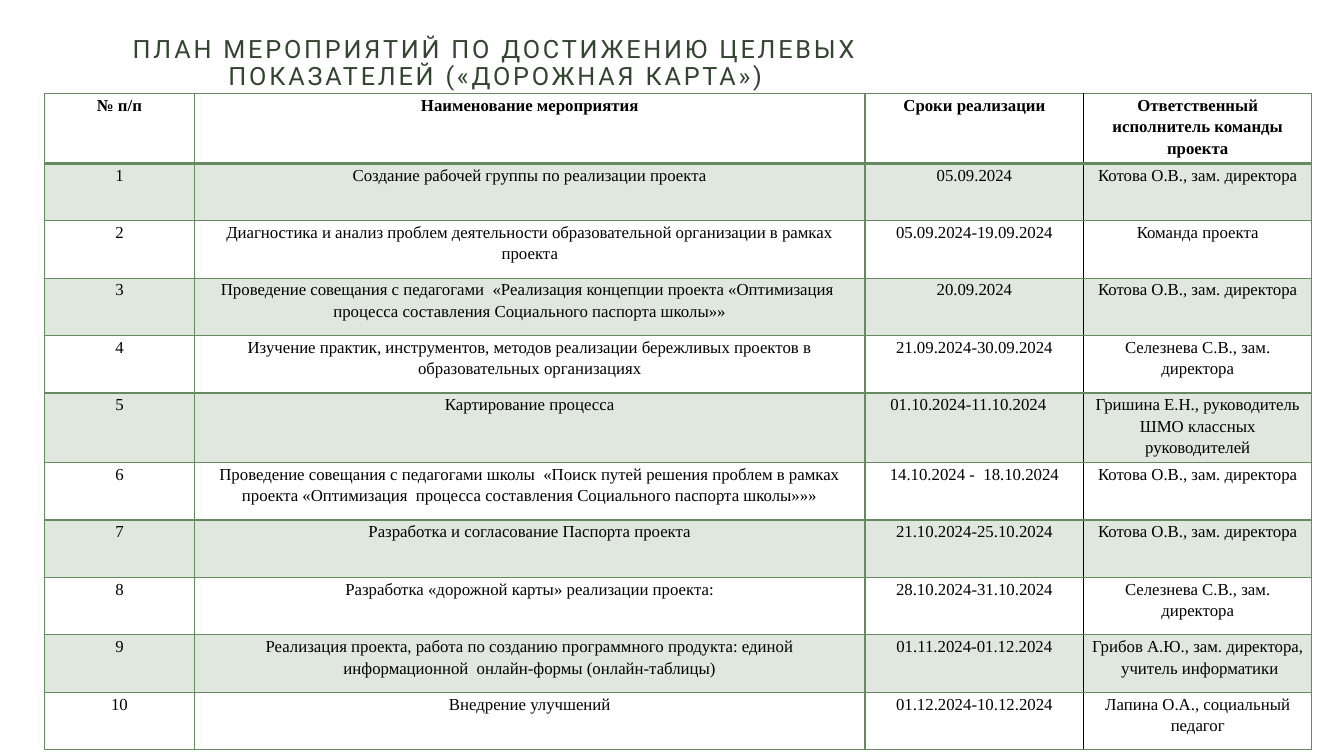
from lxml import etree
from pptx import Presentation
from pptx import util as u
from pptx.dml.color import RGBColor
from pptx.enum import text
from pptx.oxml import ns

GREEN = RGBColor(0x66, 0x8A, 0x60)
DARK_GREEN = RGBColor(0x33, 0x45, 0x30)
BLACK = RGBColor(0, 0, 0)

TITLE = "ПЛАН МЕРОПРИЯТИЙ ПО ДОСТИЖЕНИЮ ЦЕЛЕВЫХ ПОКАЗАТЕЛЕЙ («ДОРОЖНАЯ КАРТА»)"
HEADER = ("№ п/п", "Наименование мероприятия", "Сроки реализации",
          "Ответственный исполнитель команды проекта")
KOTOVA = "Котова О.В., зам. директора"
SELEZNEVA = "Селезнева С.В., зам. директора"
ACTIVITIES = [
    ("Создание рабочей группы по реализации проекта", "05.09.2024", KOTOVA),
    ("Диагностика и анализ проблем деятельности образовательной организации в рамках проекта",
     "05.09.2024-19.09.2024", "Команда проекта"),
    ("Проведение совещания с педагогами  «Реализация концепции проекта «Оптимизация  процесса "
     "составления Социального паспорта школы»»", "20.09.2024", KOTOVA),
    ("Изучение практик, инструментов, методов реализации бережливых проектов в "
     "образовательных организациях", "21.09.2024-30.09.2024", SELEZNEVA),
    ("Картирование процесса", "01.10.2024-11.10.2024",
     "Гришина Е.Н., руководитель ШМО классных руководителей"),
    ("Проведение совещания с педагогами школы  «Поиск путей решения проблем в рамках проекта "
     "«Оптимизация  процесса составления Социального паспорта школы»»»",
     "14.10.2024 -  18.10.2024", KOTOVA),
    ("Разработка и согласование Паспорта проекта", "21.10.2024-25.10.2024", KOTOVA),
    ("Разработка «дорожной карты» реализации проекта:", "28.10.2024-31.10.2024", SELEZNEVA),
    ("Реализация проекта, работа по созданию программного продукта: единой информационной  "
     "онлайн-формы (онлайн-таблицы)", "01.11.2024-01.12.2024",
     "Грибов А.Ю., зам. директора,  учитель информатики"),
    ("Внедрение улучшений", "01.12.2024-10.12.2024", "Лапина О.А., социальный педагог"),
]
COLUMN_WIDTHS = (1.49, 6.65, 2.17, 2.26)
ROW_HEIGHT = 0.57
TALL_ROW_HEIGHT = 0.64
TALL_ROWS = (0, 5)


def add_text(paragraph, content, font_name, size, color, spacing, bold=False):
    paragraph.alignment = text.PP_ALIGN.CENTER
    paragraph.line_spacing = spacing
    run = paragraph.add_run()
    run.text = content
    run.font.name = font_name
    run.font.size = u.Pt(size)
    run.font.color.rgb = color
    run.font.bold = bold
    return run


def add_border(cell, side, color, width):
    line = etree.SubElement(cell._tc.get_or_add_tcPr(), ns.qn("a:ln" + side), w=str(u.Pt(width)))
    fill = etree.SubElement(line, ns.qn("a:solidFill"))
    etree.SubElement(fill, ns.qn("a:srgbClr"), val=str(color))


presentation = Presentation()
presentation.slide_width = u.Inches(13.33)
presentation.slide_height = u.Inches(7.5)
slide = presentation.slides.add_slide(presentation.slide_layouts[6])

title = slide.shapes.add_textbox(u.Inches(0.15), u.Inches(0.1), u.Inches(9.53), u.Inches(1.07))
title.text_frame.word_wrap = True
title.text_frame.vertical_anchor = text.MSO_ANCHOR.MIDDLE
title_run = add_text(title.text_frame.paragraphs[0], TITLE, "Roboto", 18, DARK_GREEN, 0.9)
title_run.font._element.set("spc", "200")

rows = [HEADER] + [(str(number), *activity) for number, activity in enumerate(ACTIVITIES, 1)]
heights = [TALL_ROW_HEIGHT if index in TALL_ROWS else ROW_HEIGHT for index in range(len(rows))]
table = slide.shapes.add_table(
    len(rows), len(HEADER), u.Inches(0.44), u.Inches(0.93),
    u.Inches(sum(COLUMN_WIDTHS)), u.Inches(sum(heights))).table
table.first_row = False
table.horz_banding = False
for column, width in zip(table.columns, COLUMN_WIDTHS):
    column.width = u.Inches(width)

for row_index, values in enumerate(rows):
    table.rows[row_index].height = u.Inches(heights[row_index])
    for column_index, value in enumerate(values):
        cell = table.cell(row_index, column_index)
        cell.margin_left = cell.margin_right = u.Inches(0.07)
        cell.margin_top = cell.margin_bottom = 0
        add_text(cell.text_frame.paragraphs[0], value, "Times New Roman", 12, BLACK, 1.15,
                 bold=row_index == 0)
        add_border(cell, "L", BLACK if column_index == 3 else GREEN, 1)
        add_border(cell, "R", BLACK if column_index == 2 else GREEN, 1)
        add_border(cell, "T", GREEN, 2 if row_index == 1 else 1)
        add_border(cell, "B", GREEN, 2 if row_index == 0 else 1)
        if row_index % 2:
            cell.fill.solid()
            cell.fill.fore_color.rgb = GREEN
            tint = cell._tc.tcPr.find(ns.qn("a:solidFill")).find(ns.qn("a:srgbClr"))
            etree.SubElement(tint, ns.qn("a:alpha"), val="20000")
        else:
            cell.fill.background()

table.cell(5, 2).margin_right = u.Inches(0.19)

presentation.save("out.pptx")
